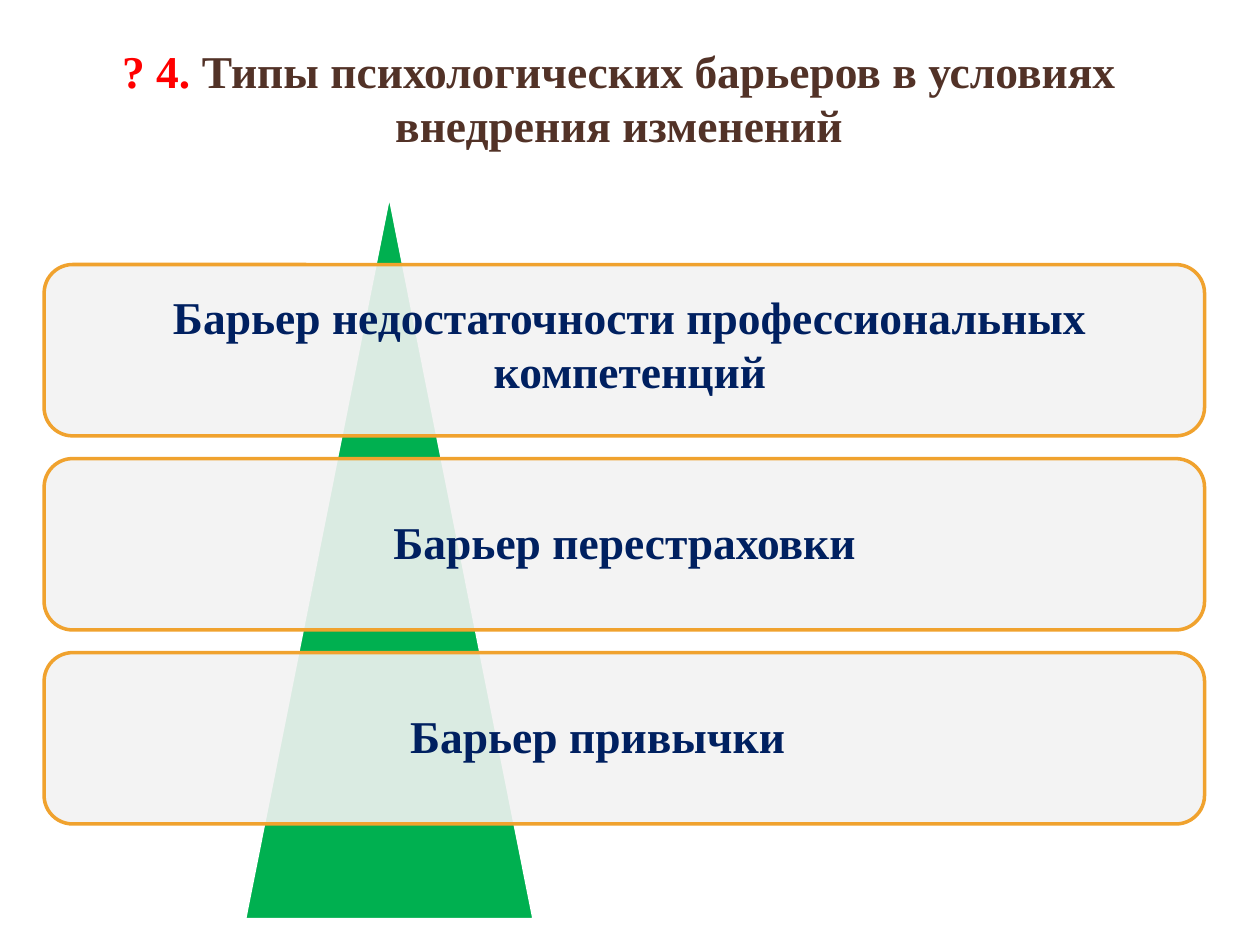
from lxml import etree
from pptx import Presentation
from pptx import util as u
from pptx.dml.color import RGBColor
from pptx.enum import shapes, text
from pptx.oxml import ns

COLORS = {
    "number": "FF0000",
    "title": "523227",
    "label": "002060",
    "triangle": "00B050",
    "edge": "FFFFFF",
    "bar": "F2F2F2",
    "border": "F0A22E",
}
FONT = "Times New Roman"
BAR_LEFT, BAR_TOP, BAR_WIDTH, BAR_HEIGHT, BAR_PITCH = 0.35, 2.1, 9.21, 1.36, 1.54
BARRIERS = [
    ("Барьер недостаточности профессиональных компетенций", (0.59, 2.33, 8.82, 0.79)),
    ("Барьер перестраховки", (0.43, 3.75, 9.06, 1.1)),
    ("Барьер привычки", (0.51, 5.4, 8.47, 0.87)),
]


def rgb(name):
    return RGBColor.from_string(COLORS[name])


def inches(box):
    return [u.Inches(v) for v in box]


def write(sp, *runs, size=26, bold=True, anchor=text.MSO_ANCHOR.MIDDLE):
    tf = sp.text_frame
    tf.word_wrap = True
    tf.auto_size = text.MSO_AUTO_SIZE.NONE
    tf.vertical_anchor = anchor
    p = tf.paragraphs[0]
    p.alignment = text.PP_ALIGN.CENTER
    for content, color in runs:
        r = p.add_run()
        r.text = content
        r.font.name = FONT
        r.font.size = u.Pt(size)
        r.font.bold = bold
        r.font.color.rgb = rgb(color)


def add_title(s, box, *runs):
    sp = s.shapes.title
    sp.left, sp.top, sp.width, sp.height = inches(box)
    write(sp, *runs, anchor=text.MSO_ANCHOR.TOP)


def add_figure(s, kind, box, fill, line, opacity=100):
    sp = s.shapes.add_shape(kind, *inches(box))
    sp.shadow.inherit = False
    sp.fill.solid()
    sp.fill.fore_color.rgb = rgb(fill)
    sp.line.color.rgb = rgb(line)
    sp.line.width = u.Pt(2)
    if opacity < 100:
        color = sp.fill._xPr.find(ns.qn("a:solidFill"))[0]
        etree.SubElement(color, ns.qn("a:alpha"), val=str(opacity * 1000))


def add_label(s, box, content):
    write(s.shapes.add_textbox(*inches(box)), (content, "label"))


def main():
    prs = Presentation()
    prs.slide_width, prs.slide_height = u.Inches(10), u.Inches(7.5)
    s = prs.slides.add_slide(prs.slide_layouts[5])
    add_title(
        s,
        (0.35, 0.29, 9.13, 0.98),
        ("? 4.", "number"),
        (" Типы психологических барьеров в условиях внедрения изменений", "title"),
    )
    kinds = shapes.MSO_SHAPE
    add_figure(s, kinds.ISOSCELES_TRIANGLE, (1.94, 1.53, 2.3, 5.77), "triangle", "edge")
    for row in range(len(BARRIERS)):
        box = (BAR_LEFT, BAR_TOP + row * BAR_PITCH, BAR_WIDTH, BAR_HEIGHT)
        add_figure(s, kinds.ROUNDED_RECTANGLE, box, "bar", "border", opacity=90)
    for content, box in BARRIERS:
        add_label(s, box, content)
    prs.save("out.pptx")


if __name__ == "__main__":
    main()
